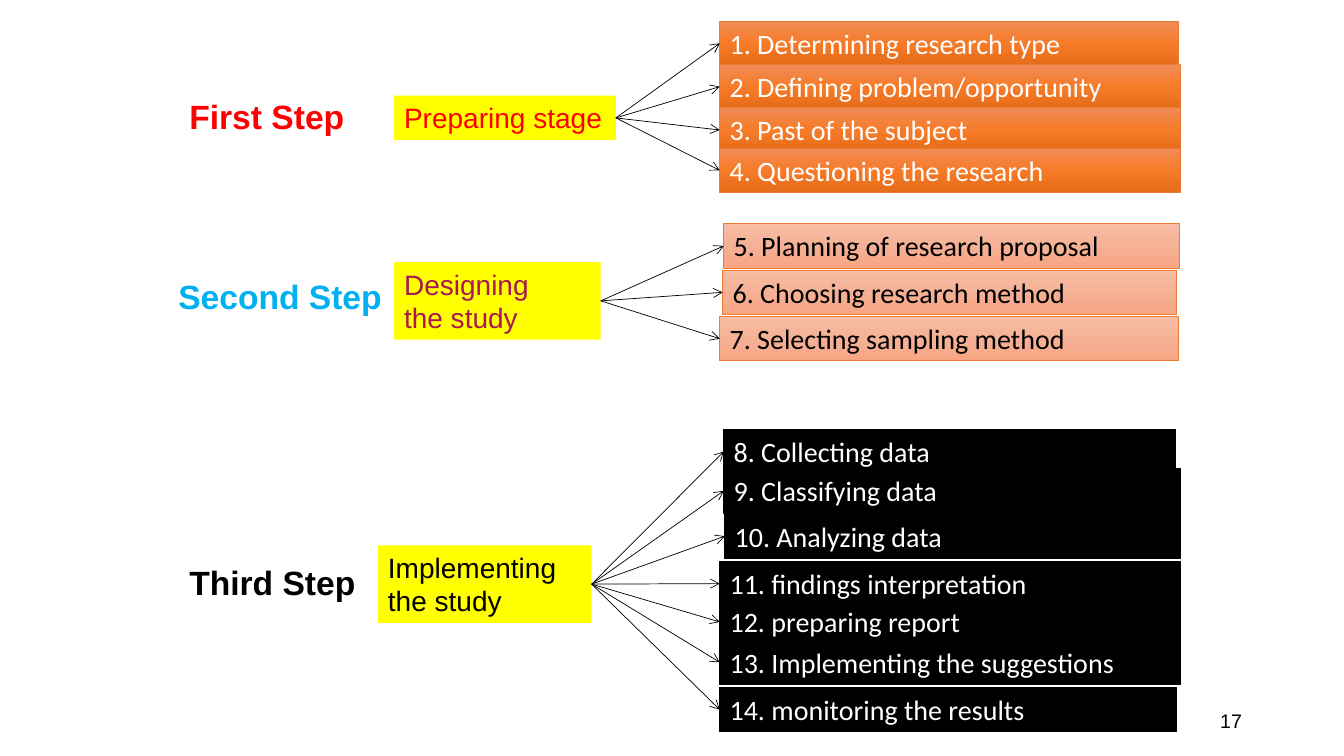
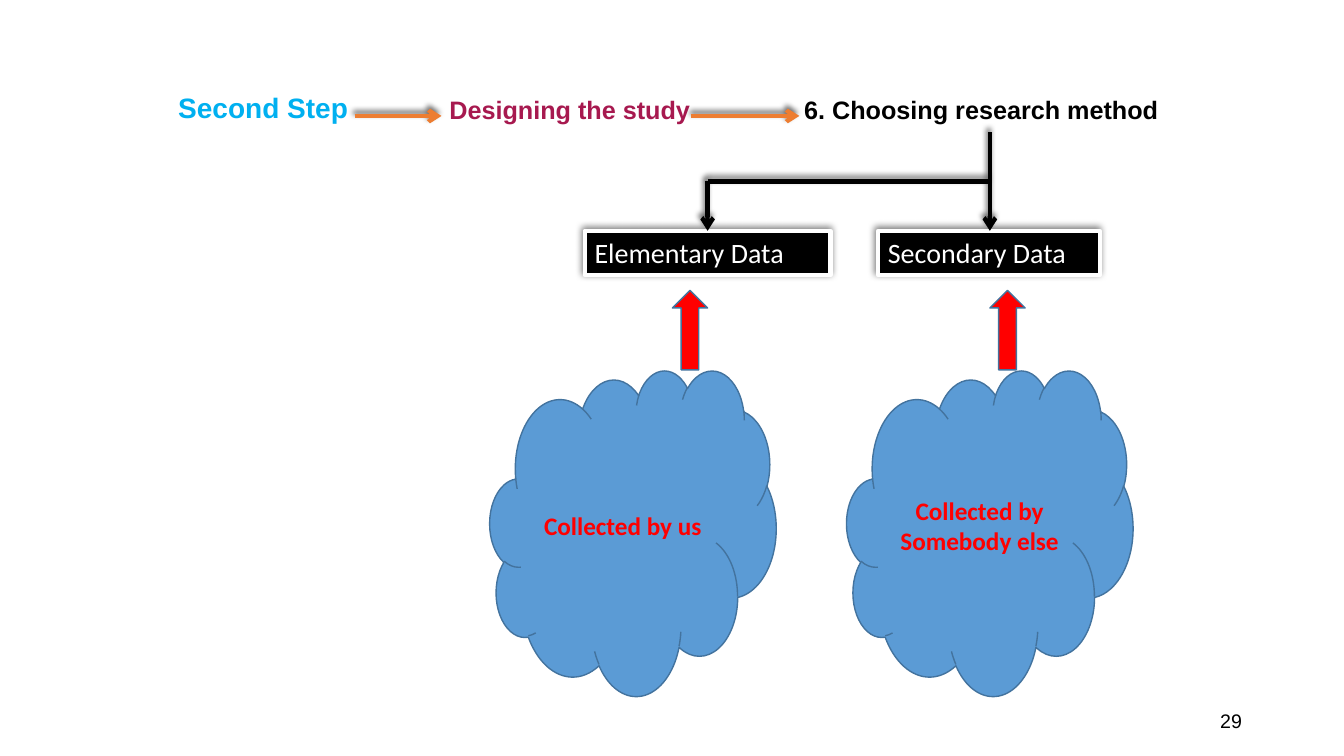
from copy import deepcopy
from dataclasses import dataclass

from lxml.etree import SubElement
from pptx import Presentation
from pptx.dml.color import RGBColor
from pptx.enum.shapes import MSO_CONNECTOR, MSO_SHAPE
from pptx.enum.text import MSO_ANCHOR, PP_ALIGN
from pptx.oxml.ns import qn
from pptx.util import Inches, Pt


@dataclass(frozen=True)
class Theme:
    heading_font: str = "Arial"
    body_font: str = "Calibri"
    step_size: int = 24
    body_size: int = 20
    small_size: int = 18
    number_size: int = 14
    hairline: float = 0.5
    thin: float = 1
    thick: float = 3
    black: str = "000000"
    white: str = "FFFFFF"
    red: str = "FF0000"
    sky: str = "00B0F0"
    plum: str = "A7194F"
    yellow: str = "FFFF00"
    orange: str = "ED7D31"
    blue: str = "5B9BD5"
    blue_edge: str = "43739E"
    deep_orange: tuple = ("F18C57", "F67B28", "E56C19")
    pale_orange: tuple = ("F7BDA5", "F5B196", "F8A582")
    box_shadow: tuple = (50, 5, 2)
    line_shadow: tuple = (60, 4, 3)
    shadow_angle: int = 245


CELL = Inches(0.1)
COLUMNS, ROWS = 133.33, 75
LINE_HEIGHT = 4.4
THEME = Theme()


def cells(*counts):
    return [round(count * CELL) for count in counts]


def write(frame, text, *, font, size, color, bold=False,
          align=PP_ALIGN.LEFT, anchor=MSO_ANCHOR.TOP):
    frame.word_wrap = True
    frame.vertical_anchor = anchor
    frame.text = text
    for para in frame.paragraphs:
        para.alignment = align
        for span in para.runs:
            span.font.name = font
            span.font.size = Pt(size)
            span.font.bold = bold
            span.font.color.rgb = RGBColor.from_string(color)


def paint(fill, colors, properties):
    if isinstance(colors, str):
        fill.solid()
        fill.fore_color.rgb = RGBColor.from_string(colors)
        return
    fill.gradient()
    fill.gradient_angle = 270
    stops = properties.find(qn("a:gradFill")).find(qn("a:gsLst"))
    while len(stops) < len(colors):
        stops.append(deepcopy(stops[0]))
    for index, (stop, color) in enumerate(zip(fill.gradient_stops, colors)):
        stop.position = index / (len(colors) - 1)
        stop.color.rgb = RGBColor.from_string(color)


def cast_shadow(effects, opacity, blur, distance):
    shadow = SubElement(
        effects, qn("a:outerShdw"), blurRad=str(Pt(blur)), dist=str(Pt(distance)),
        dir=str(THEME.shadow_angle * 60000), algn="ctr", rotWithShape="0")
    color = SubElement(shadow, qn("a:srgbClr"), val=THEME.black)
    SubElement(color, qn("a:alpha"), val=str(opacity * 1000))


class Deck:
    def __init__(self, theme):
        self.theme = theme
        self.deck = Presentation()
        self.deck.slide_width, self.deck.slide_height = cells(COLUMNS, ROWS)
        self.page = None

    def add_page(self, number):
        self.page = self.deck.slides.add_slide(self.deck.slide_layouts[6])
        self.label(str(number), 94.2, 69.5, 30, 4, size=self.theme.number_size,
                   color=self.theme.black, align=PP_ALIGN.RIGHT, anchor=MSO_ANCHOR.MIDDLE)

    def label(self, text, left, top, width, height, **style):
        box = self.page.shapes.add_textbox(*cells(left, top, width, height))
        write(box.text_frame, text, font=self.theme.heading_font, **style)

    def shape(self, kind, left, top, width, height, fill,
              edge=None, weight=None, shadow=None):
        box = self.page.shapes.add_shape(kind, *cells(left, top, width, height))
        box.shadow.inherit = False
        properties = box.element.spPr
        paint(box.fill, fill, properties)
        if edge:
            box.line.color.rgb = RGBColor.from_string(edge)
            box.line.width = Pt(weight)
        else:
            box.line.fill.background()
        if shadow:
            cast_shadow(properties.find(qn("a:effectLst")), *shadow)
        return box

    def panel(self, text, left, top, width, color, fill, height=LINE_HEIGHT,
              font=None, **look):
        box = self.shape(MSO_SHAPE.RECTANGLE, left, top, width, height, fill, **look)
        write(box.text_frame, text, font=font or self.theme.body_font,
              size=self.theme.body_size, color=color)
        return box

    def line(self, start, end, color, weight, arrow=True, shadow=None):
        connector = self.page.shapes.add_connector(
            MSO_CONNECTOR.STRAIGHT, *cells(*start, *end))
        connector.line.color.rgb = RGBColor.from_string(color)
        connector.line.width = Pt(weight)
        if arrow:
            SubElement(connector.line._get_or_add_ln(), qn("a:tailEnd"), type="arrow")
        effects = SubElement(connector.element.spPr, qn("a:effectLst"))
        if shadow:
            cast_shadow(effects, *shadow)
        return connector

    def link(self, source, target):
        connector = self.line((0, 0), (0, 0), self.theme.black, self.theme.hairline)
        connector.begin_connect(source, 3)
        connector.end_connect(target, 1)

    def step(self, title, stage, tasks, color, fill, edge, weight):
        name, left, top, width, title_color = title
        self.label(name, left, top, width, 5, size=self.theme.step_size,
                   color=title_color, bold=True)
        text, left, top, width, height, stage_color = stage
        source = self.panel(text, left, top, width, stage_color, self.theme.yellow,
                            height=height, font=self.theme.heading_font)
        targets = [self.panel(*task, color, fill, edge=edge, weight=weight)
                   for task in tasks]
        for target in targets:
            self.link(source, target)

    def cloud(self, text, left):
        theme = self.theme
        box = self.shape(MSO_SHAPE.CLOUD, left, 36.7, 28.4, 32.3, theme.blue,
                         edge=theme.blue_edge, weight=theme.thin)
        write(box.text_frame, text, font=theme.body_font, size=theme.small_size,
              color=theme.red, bold=True, align=PP_ALIGN.CENTER,
              anchor=MSO_ANCHOR.MIDDLE)


def build_steps(deck):
    theme = deck.theme
    deck.add_page(17)
    deck.step(
        ("First Step", 17.8, 9, 18.9, theme.red),
        ("Preparing stage", 39.1, 9.5, 22, LINE_HEIGHT, theme.red),
        [("1. Determining research type", 71.4, 2.1, 45.5),
         ("2. Defining problem/opportunity", 71.4, 6.4, 45.7),
         ("3. Past of the subject", 71.4, 10.7, 45.7),
         ("4. Questioning the research", 71.4, 14.7, 45.7)],
        theme.white, theme.deep_orange, theme.orange, theme.hairline)
    deck.step(
        ("Second Step", 16.7, 26.9, 23.2, theme.sky),
        ("Designing\nthe study", 39.1, 26, 20.5, 7.7, theme.plum),
        [("5. Planning of research proposal", 71.8, 22.2, 45.2),
         ("6. Choosing research method", 71.7, 26.8, 45),
         ("7. Selecting sampling method", 71.4, 31.4, 45.5)],
        theme.black, theme.pale_orange, theme.orange, theme.hairline)
    deck.step(
        ("Third Step", 17.8, 55.3, 19.7, theme.black),
        ("Implementing\nthe study", 37.5, 54.1, 21.2, 7.7, theme.black),
        [("8. Collecting data", 71.8, 42.6, 44.8),
         ("9. Classifying data", 71.8, 46.5, 45.3),
         ("10. Analyzing data", 71.9, 51, 45.2),
         ("11. findings interpretation", 71.4, 55.7, 45.7),
         ("12. preparing report", 71.4, 59.5, 45.7),
         ("13. Implementing the suggestions", 71.4, 63.5, 45.7),
         ("14. monitoring the results", 71.4, 68.2, 45.3)],
        theme.white, theme.black, theme.black, theme.thin)


def build_method(deck):
    theme = deck.theme
    deck.add_page(29)
    for text, left, width, size, color in [
            ("Second Step", 16.7, 20, theme.body_size, theme.sky),
            ("Designing the study", 43.6, 28, theme.small_size, theme.plum),
            ("6. Choosing research method", 78.8, 40, theme.small_size, theme.black)]:
        deck.label(text, left, 8.7, width, 4.1, size=size, color=color, bold=True,
                   anchor=MSO_ANCHOR.BOTTOM)

    for text, left, width in [("Secondary Data", 87.1, 22), ("Elementary Data", 58, 24.4)]:
        deck.panel(text, left, 22.9, width, theme.white, theme.black,
                   edge=theme.white, weight=theme.thick, shadow=theme.box_shadow)

    first, second, fork, data_top = 70.2, 98.2, 18, 22.9
    for start, end, color, arrow in [
            ((second, fork), (first, fork), theme.black, False),
            ((first, fork), (first, data_top), theme.black, True),
            ((second, 13.1), (second, data_top), theme.black, True),
            ((35.2, 11.5), (43.8, 11.5), theme.orange, True),
            ((68.6, 11.5), (79.3, 11.5), theme.orange, True)]:
        deck.line(start, end, color, theme.thick, arrow, theme.line_shadow)

    for text, cloud_left, arrow_left in [
            ("Collected by us", 48.6, 66.7),
            ("Collected by Somebody else", 84, 98.2)]:
        deck.cloud(text, cloud_left)
        deck.shape(MSO_SHAPE.UP_ARROW, arrow_left, 28.8, 3.5, 7.9, theme.red,
                   edge=theme.blue_edge, weight=theme.thin)


def main():
    deck = Deck(THEME)
    build_steps(deck)
    build_method(deck)
    deck.deck.save("out.pptx")


if __name__ == "__main__":
    main()
